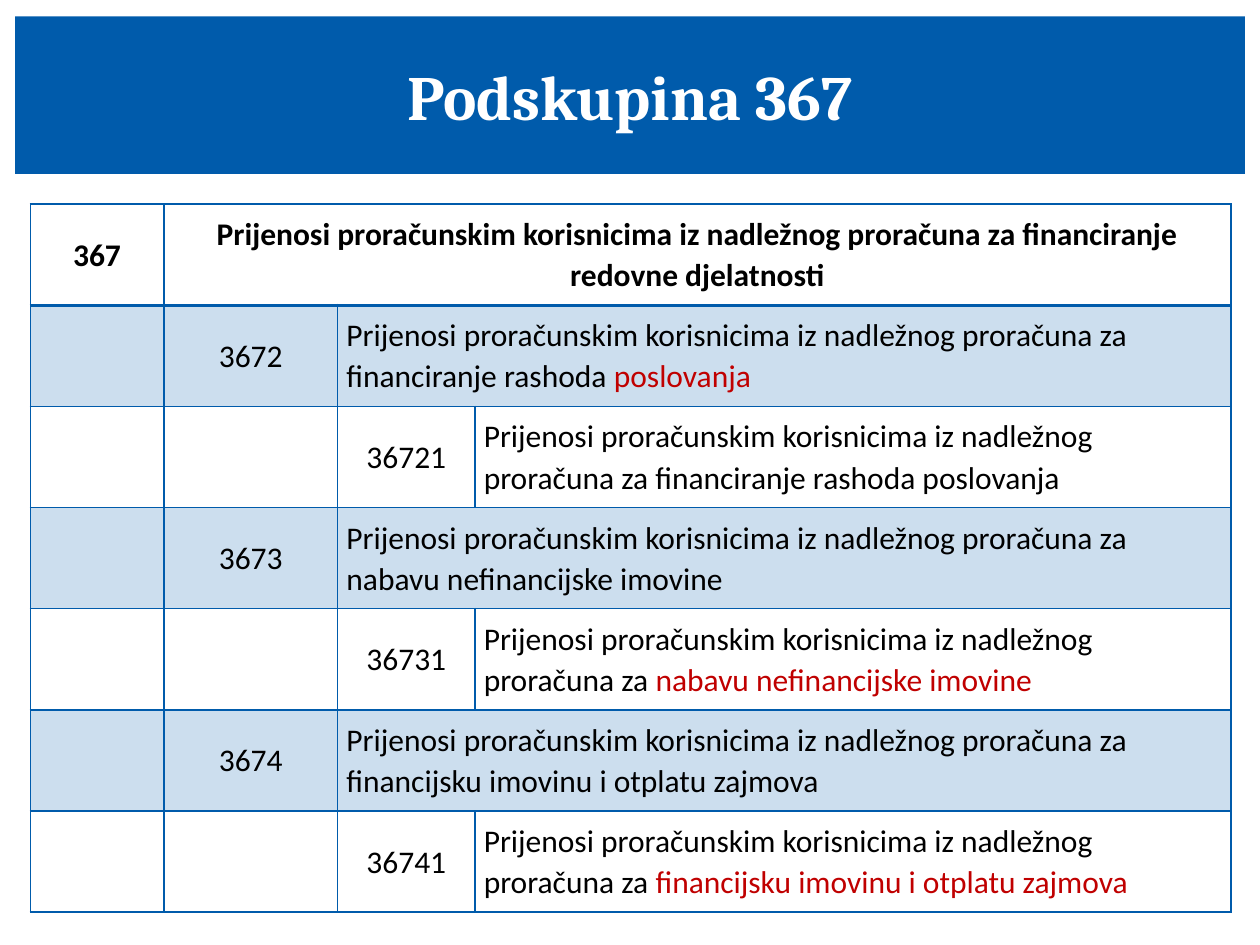
from typing import NamedTuple

from lxml.etree import SubElement
from pptx import Presentation
from pptx.dml.color import RGBColor
from pptx.enum.text import MSO_ANCHOR as Anchor, PP_ALIGN as Align
from pptx.oxml.ns import qn
from pptx.util import Inches, Pt

BLUE, RED, BLACK, WHITE = "005BAB", "C00000", "000000", "FFFFFF"
PREFIX = "Prijenosi proračunskim korisnicima iz nadležnog proračuna za "
COLUMN_WIDTHS = (1.06, 1.38, 1.09, 6)
ROW_HEIGHT = 0.8


class Account(NamedTuple):
    code: str
    level: int
    text: str
    red: str = ""


ACCOUNTS = [
    Account("367", 0, "financiranje redovne djelatnosti"),
    Account("3672", 1, "financiranje rashoda ", "poslovanja"),
    Account("36721", 2, "financiranje rashoda poslovanja"),
    Account("3673", 1, "nabavu nefinancijske imovine"),
    Account("36731", 2, "", "nabavu nefinancijske imovine"),
    Account("3674", 1, "financijsku imovinu i otplatu zajmova"),
    Account("36741", 2, "", "financijsku imovinu i otplatu zajmova"),
]


def color(value: str) -> RGBColor:
    return RGBColor.from_string(value)


def add_text(p, text: str, *, size=18, font="Calibri", fill=BLACK, bold=False) -> None:
    r = p.add_run()
    r.text = text
    r.font.size = Pt(size)
    r.font.name = font
    r.font.bold = bold
    r.font.color.rgb = color(fill)


def add_border(cell, side: str, width: float) -> None:
    ln = SubElement(cell._tc.get_or_add_tcPr(), qn(f"a:ln{side}"), w=str(Pt(width)))
    SubElement(SubElement(ln, qn("a:solidFill")), qn("a:srgbClr"), val=BLUE)


def style_cell(cell, tinted: bool, top: float, bottom: float) -> None:
    for side, width in zip("LRTB", (1, 1, top, bottom)):
        add_border(cell, side, width)
    if tinted:
        cell.fill.solid()
        cell.fill.fore_color.rgb = color(BLUE)
        rgb = cell._tc.tcPr.find(qn("a:solidFill")).find(qn("a:srgbClr"))
        SubElement(rgb, qn("a:alpha"), val="20000")
    else:
        cell.fill.background()
    cell.vertical_anchor = Anchor.MIDDLE
    cell.margin_left = cell.margin_right = cell.margin_top = Inches(0.07)
    cell.margin_bottom = Inches(0.08)


def cell_paragraph(cell, align: Align):
    p = cell.text_frame.paragraphs[0]
    p.alignment = align
    p.line_spacing = 1.07
    p.space_after = Pt(8)
    return p


def fill_row(table, row: int, account: Account) -> None:
    header = account.level == 0
    code = table.cell(row, account.level)
    name = table.cell(row, account.level + 1)
    last = table.cell(row, len(COLUMN_WIDTHS) - 1)
    if account.level < 2:
        name.merge(last)
    for col in range(len(COLUMN_WIDTHS)):
        style_cell(table.cell(row, col), account.level == 1,
                   2 if row == 1 else 1, 2 if header else 1)
    add_text(cell_paragraph(code, Align.CENTER), account.code, bold=header)
    p = cell_paragraph(name, Align.CENTER if header else Align.LEFT)
    add_text(p, PREFIX + account.text, bold=header)
    if account.red:
        add_text(p, account.red, fill=RED)


def add_accounts(s) -> None:
    frame = s.shapes.add_table(
        len(ACCOUNTS), len(COLUMN_WIDTHS), Inches(0.24), Inches(1.62),
        Inches(sum(COLUMN_WIDTHS)), Inches(ROW_HEIGHT * len(ACCOUNTS)))
    table = frame.table
    table.first_row = table.horz_banding = False
    for column, width in zip(table.columns, COLUMN_WIDTHS):
        column.width = Inches(width)
    for row, account in enumerate(ACCOUNTS):
        table.rows[row].height = Inches(ROW_HEIGHT)
        fill_row(table, row, account)


def add_title(s, text: str) -> None:
    sp = s.shapes.title
    sp.left, sp.top = Inches(0.12), Inches(0.13)
    sp.width, sp.height = Inches(9.76), Inches(1.25)
    sp.fill.solid()
    sp.fill.fore_color.rgb = color(BLUE)
    tf = sp.text_frame
    tf.vertical_anchor = Anchor.MIDDLE
    p = tf.paragraphs[0]
    p.alignment = Align.CENTER
    add_text(p, text, size=36, font="Cambria", fill=WHITE, bold=True)


def main() -> None:
    prs = Presentation()
    prs.slide_width, prs.slide_height = Inches(10), Inches(7.5)
    s = prs.slides.add_slide(prs.slide_layouts[5])
    add_title(s, "Podskupina 367")
    add_accounts(s)
    prs.save("out.pptx")


if __name__ == "__main__":
    main()
